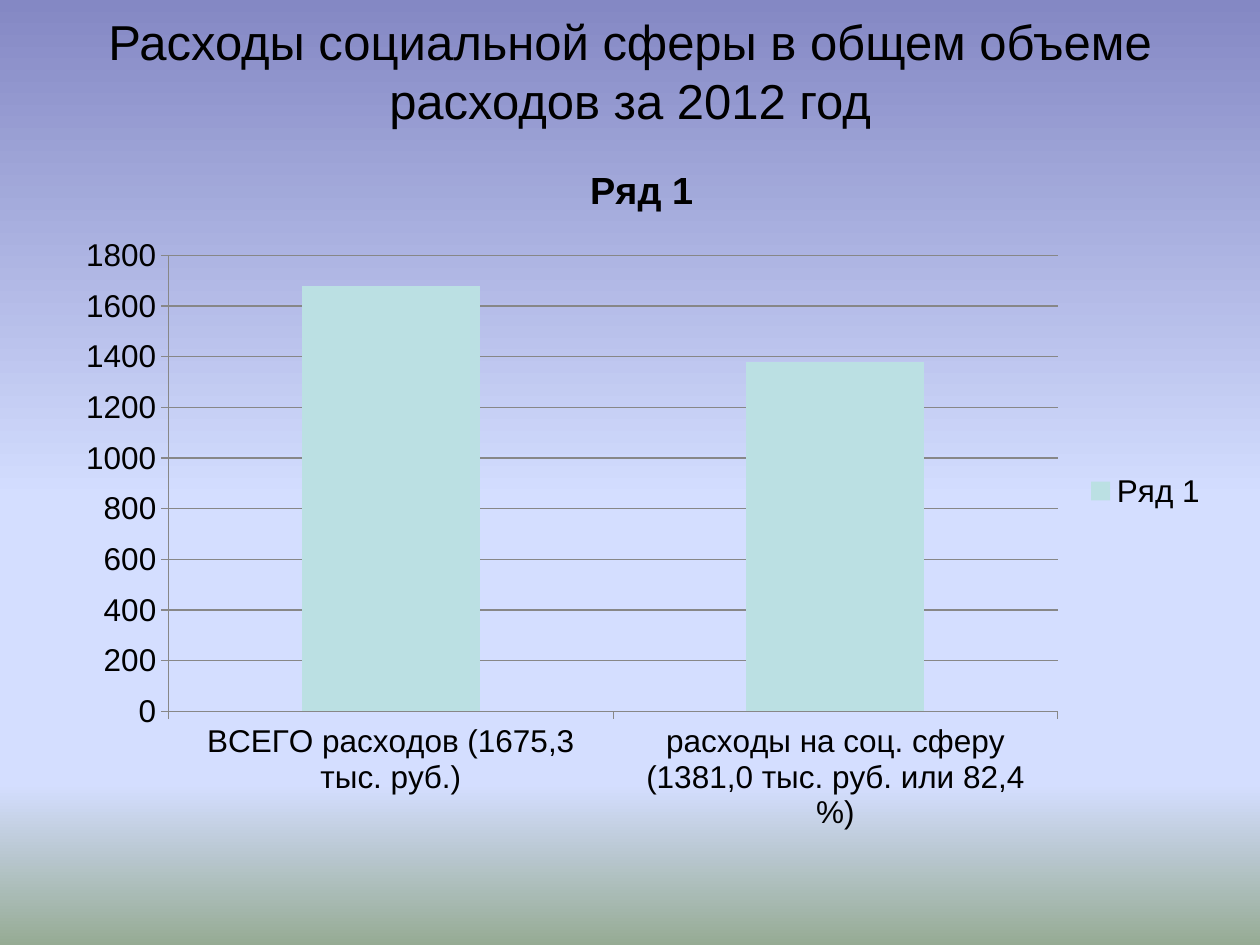
import lxml.etree
import pptx
import pptx.chart.data
import pptx.dml.color
import pptx.enum.chart
import pptx.enum.text
import pptx.oxml.ns
import pptx.util

Pt = pptx.util.Pt
RGBColor = pptx.dml.color.RGBColor
qn = pptx.oxml.ns.qn

BLACK = RGBColor(0x00, 0x00, 0x00)
AXIS_GRAY = RGBColor(0x87, 0x87, 0x87)
BAR_TEAL = RGBColor(0xBB, 0xE0, 0xE3)
DUSK = RGBColor(0x84, 0x88, 0xC4)
SKY = RGBColor(0xD4, 0xDE, 0xFF)
MEADOW = RGBColor(0x96, 0xAB, 0x94)
BACKGROUND_STOPS = [(0, DUSK), (53, SKY), (83, SKY), (100, MEADOW)]

FONT = "Arial"
SERIES_NAME = "Ряд 1"
EXPENSES = {
    "ВСЕГО расходов (1675,3 тыс. руб.)": 1680,
    "расходы на соц. сферу (1381,0 тыс. руб. или 82,4 %)": 1380,
}


def set_font(font, size, bold=False):
    font.name = FONT
    font.size = Pt(size)
    font.bold = bold
    font.color.rgb = BLACK


def paint_background(page):
    fill = page.background.fill
    fill.gradient()
    fill.gradient_angle = 270
    # The public interface cannot add stops, so the list is rebuilt
    stop_list = page.background._cSld.find(".//" + qn("a:gsLst"))
    for stop in list(stop_list):
        stop_list.remove(stop)
    for percent, color in BACKGROUND_STOPS:
        stop = lxml.etree.SubElement(stop_list, qn("a:gs"), pos=str(percent * 1000))
        lxml.etree.SubElement(stop, qn("a:srgbClr"), val=str(color))


def add_title(page, left, top, width, height):
    box = page.shapes.add_textbox(Pt(left), Pt(top), Pt(width), Pt(height))
    frame = box.text_frame
    frame.word_wrap = True
    frame.vertical_anchor = pptx.enum.text.MSO_ANCHOR.MIDDLE
    # The deep bottom inset lifts the text towards the page edge
    frame.margin_bottom = Pt(56.6)
    para = frame.paragraphs[0]
    para.text = "Расходы социальной сферы в общем объеме расходов за 2012 год"
    para.alignment = pptx.enum.text.PP_ALIGN.CENTER
    set_font(para.font, 28)


def style_axis(axis):
    axis.major_tick_mark = pptx.enum.chart.XL_TICK_MARK.OUTSIDE
    axis.minor_tick_mark = pptx.enum.chart.XL_TICK_MARK.NONE
    axis.format.line.color.rgb = AXIS_GRAY
    axis.format.line.width = Pt(0.75)
    set_font(axis.tick_labels.font, 18)


def add_expense_chart(page, left, top, width, height):
    data = pptx.chart.data.CategoryChartData()
    data.categories = list(EXPENSES)
    data.add_series(SERIES_NAME, list(EXPENSES.values()))
    chart = page.shapes.add_chart(
        pptx.enum.chart.XL_CHART_TYPE.COLUMN_STACKED,
        Pt(left), Pt(top), Pt(width), Pt(height), data,
    ).chart
    set_font(chart.font, 18)

    # Chart title
    chart.has_title = True
    title = chart.chart_title
    title.include_in_layout = False
    para = title.text_frame.paragraphs[0]
    para.text = SERIES_NAME
    set_font(para.font, 21.6, bold=True)

    # Columns
    plot = chart.plots[0]
    plot.vary_by_categories = False
    plot.gap_width = 150
    plot.overlap = 100
    fill = plot.series[0].format.fill
    fill.solid()
    fill.fore_color.rgb = BAR_TEAL

    # Axes and gridlines
    style_axis(chart.category_axis)
    style_axis(chart.value_axis)
    chart.value_axis.minimum_scale = 0
    chart.value_axis.maximum_scale = 1800
    chart.value_axis.major_unit = 200
    chart.value_axis.has_major_gridlines = True
    grid_line = chart.value_axis.major_gridlines.format.line
    grid_line.color.rgb = AXIS_GRAY
    grid_line.width = Pt(0.75)

    # Legend
    chart.has_legend = True
    chart.legend.position = pptx.enum.chart.XL_LEGEND_POSITION.RIGHT
    chart.legend.include_in_layout = False
    set_font(chart.legend.font, 18)


def main():
    deck = pptx.Presentation()
    deck.slide_width = Pt(720)
    deck.slide_height = Pt(540)
    page = deck.slides.add_slide(deck.slide_layouts[6])
    paint_background(page)
    add_title(page, 36, 21.6, 648, 90)
    add_expense_chart(page, 36, 78.8, 661.5, 403.6)
    deck.save("out.pptx")


if __name__ == "__main__":
    main()
